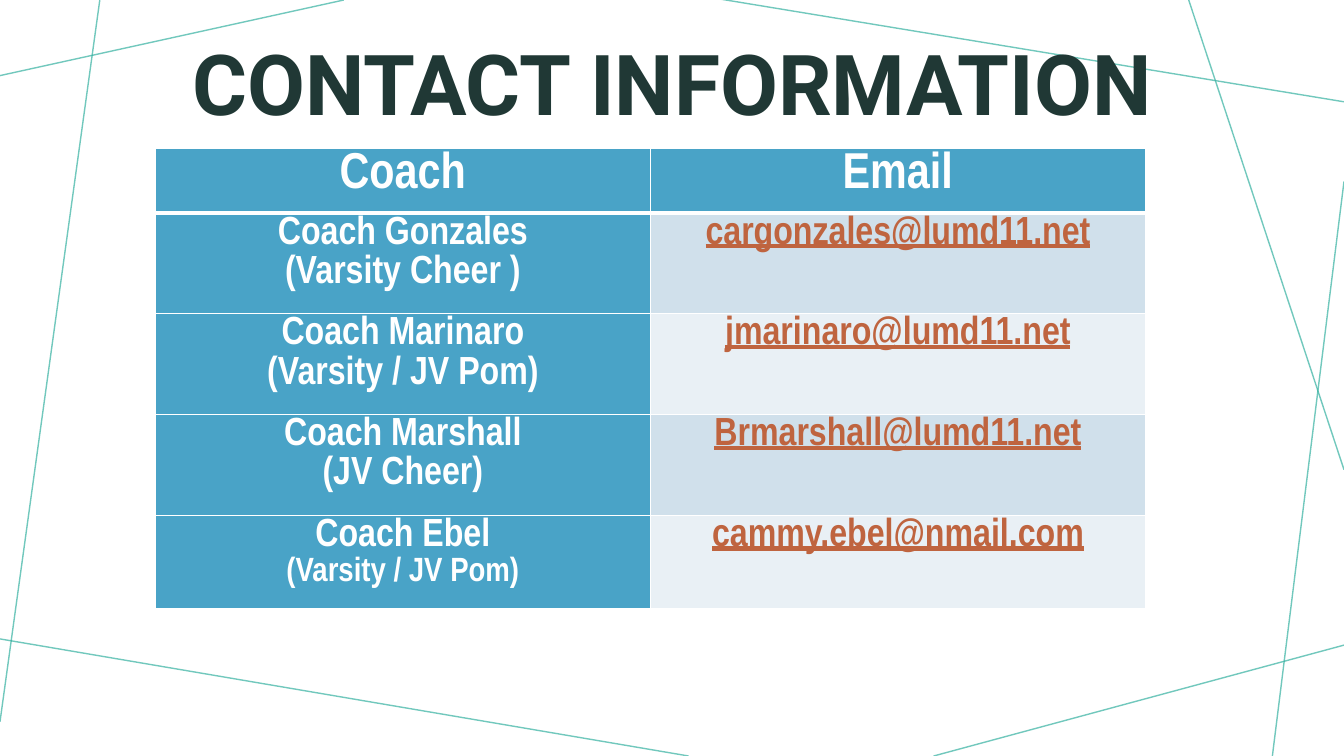
from lxml import etree
from pptx import Presentation
from pptx.dml.color import RGBColor
from pptx.enum.shapes import MSO_CONNECTOR
from pptx.enum.text import MSO_ANCHOR, PP_ALIGN
from pptx.oxml.ns import qn
from pptx.util import Inches, Pt

TITLE = "CONTACT INFORMATION"
HEADERS = ["Coach", "Email"]
COACHES = [
    ("Coach Gonzales", "(Varsity Cheer )", 28, "cargonzales@lumd11.net"),
    ("Coach Marinaro", "(Varsity / JV Pom)", 28, "jmarinaro@lumd11.net"),
    ("Coach Marshall", "(JV Cheer)", 28, "Brmarshall@lumd11.net"),
    ("Coach Ebel", "(Varsity / JV Pom)", 24, "cammy.ebel@nmail.com"),
]
COL_WIDTH = 4.91
ROW_HEIGHTS = [0.59, 0.97, 0.97, 0.97, 0.93]
BACKGROUND_LINES = [
    (3.41, 0, 0, 0.75),
    (0.99, 0, 0, 7.16),
    (6.83, 7.5, -0.05, 6.33),
    (13.33, 6.4, 9.26, 7.5),
    (13.33, 1.8, 12.62, 7.5),
    (13.33, 4.66, 11.79, 0),
    (13.33, 1.01, 7.14, -0.01),
]
TEAL, DARK, WHITE = "36B1A1", "203835", "FFFFFF"
BLUE, EMAIL_COLOR = "49A3C7", "BF643F"
BANDS = ["D0E0EB", "E9F0F5"]


def rgb(value):
    return RGBColor.from_string(value)


def style(p, font, size, color, spacing, underline=None):
    p.alignment = PP_ALIGN.CENTER
    p.line_spacing = spacing
    p.font.name = font
    p.font.size = Pt(size)
    p.font.bold = True
    p.font.underline = underline
    p.font.color.rgb = rgb(color)


def add_background_line(slide, ends):
    line = slide.shapes.add_connector(MSO_CONNECTOR.STRAIGHT, *map(Inches, ends))
    line.line.width = Pt(1)
    line.line.color.rgb = rgb(TEAL)
    color = line.line._ln.find(".//" + qn("a:srgbClr"))
    etree.SubElement(color, qn("a:alpha"), val="70000")
    etree.SubElement(line._element.spPr, qn("a:effectLst"))


def add_borders(cell, top, bottom):
    tc_pr = cell._tc.get_or_add_tcPr()
    for side, width in (("L", 1), ("R", 1), ("T", top), ("B", bottom)):
        ln = etree.SubElement(tc_pr, qn("a:ln" + side), w=str(Pt(width)))
        fill = etree.SubElement(ln, qn("a:solidFill"))
        etree.SubElement(fill, qn("a:srgbClr"), val=WHITE)


def fill_cell(cell, row, fill, lines, color=WHITE, underline=None):
    add_borders(cell, 3 if row == 1 else 1, 3 if row == 0 else 1)
    cell.fill.solid()
    cell.fill.fore_color.rgb = rgb(fill)
    cell.margin_left = cell.margin_right = Inches(0.07)
    cell.margin_top = cell.margin_bottom = 0
    tf = cell.text_frame
    tf.text = "\n".join(text for text, size in lines)
    for p, (text, size) in zip(tf.paragraphs, lines):
        style(p, "Arial Narrow", size, color, 1.07, underline)


def add_contacts(slide):
    table = slide.shapes.add_table(
        len(ROW_HEIGHTS), len(HEADERS), Inches(1.54), Inches(1.47),
        Inches(COL_WIDTH * len(HEADERS)), Inches(sum(ROW_HEIGHTS))).table
    for column in table.columns:
        column.width = Inches(COL_WIDTH)
    for row, height in zip(table.rows, ROW_HEIGHTS):
        row.height = Inches(height)
    for col, header in enumerate(HEADERS):
        fill_cell(table.cell(0, col), 0, BLUE, [(header, 36)])
    for row, (name, team, team_size, email) in enumerate(COACHES, 1):
        fill_cell(table.cell(row, 0), row, BLUE, [(name, 28), (team, team_size)])
        fill_cell(table.cell(row, 1), row, BANDS[(row - 1) % 2],
                  [(email, 28)], EMAIL_COLOR, True)


def add_title(slide):
    sp = slide.shapes.add_textbox(
        Inches(1.25), Inches(0.12), Inches(10.83), Inches(1.51))
    tf = sp.text_frame
    tf.word_wrap = True
    tf.vertical_anchor = MSO_ANCHOR.MIDDLE
    tf.text = TITLE
    style(tf.paragraphs[0], "Roboto", 60, DARK, 0.9)


def main():
    prs = Presentation()
    prs.slide_width, prs.slide_height = Inches(13.33), Inches(7.5)
    s = prs.slides.add_slide(prs.slide_layouts[6])
    for ends in BACKGROUND_LINES:
        add_background_line(s, ends)
    add_title(s)
    add_contacts(s)
    prs.save("out.pptx")


if __name__ == "__main__":
    main()
